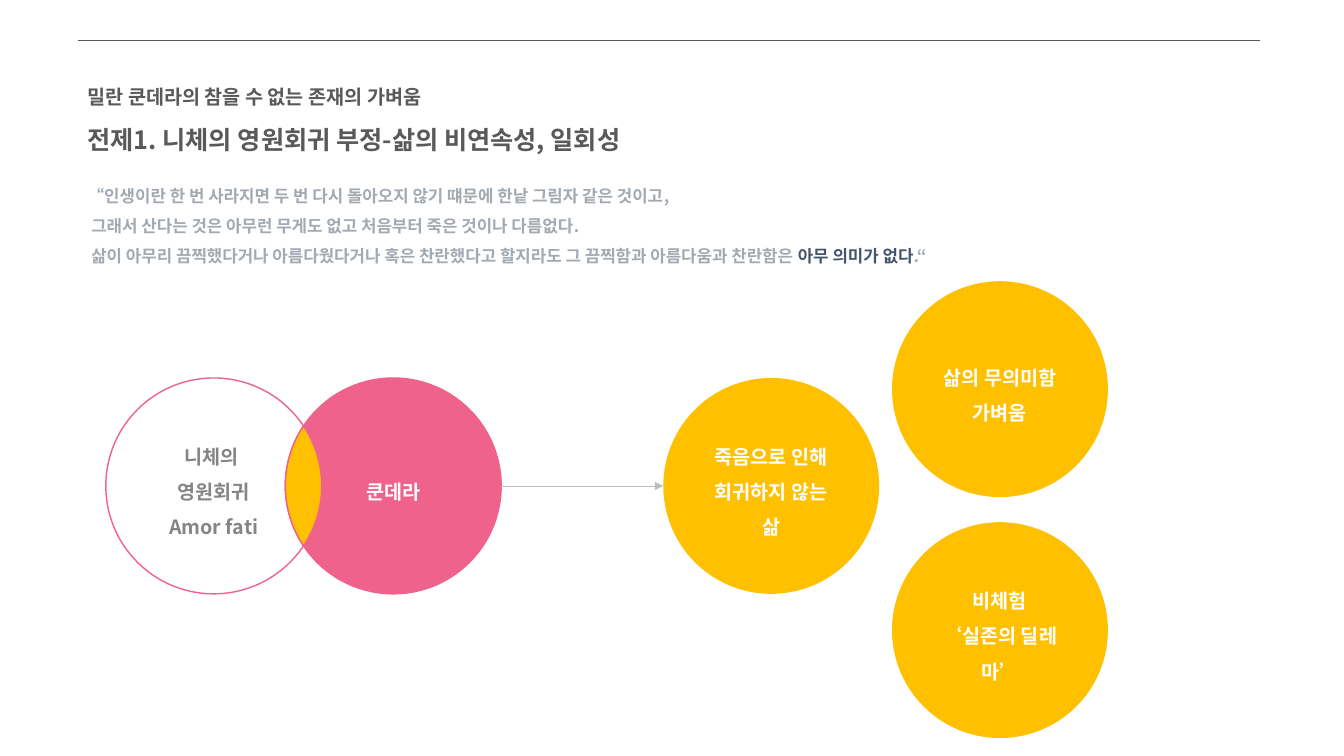
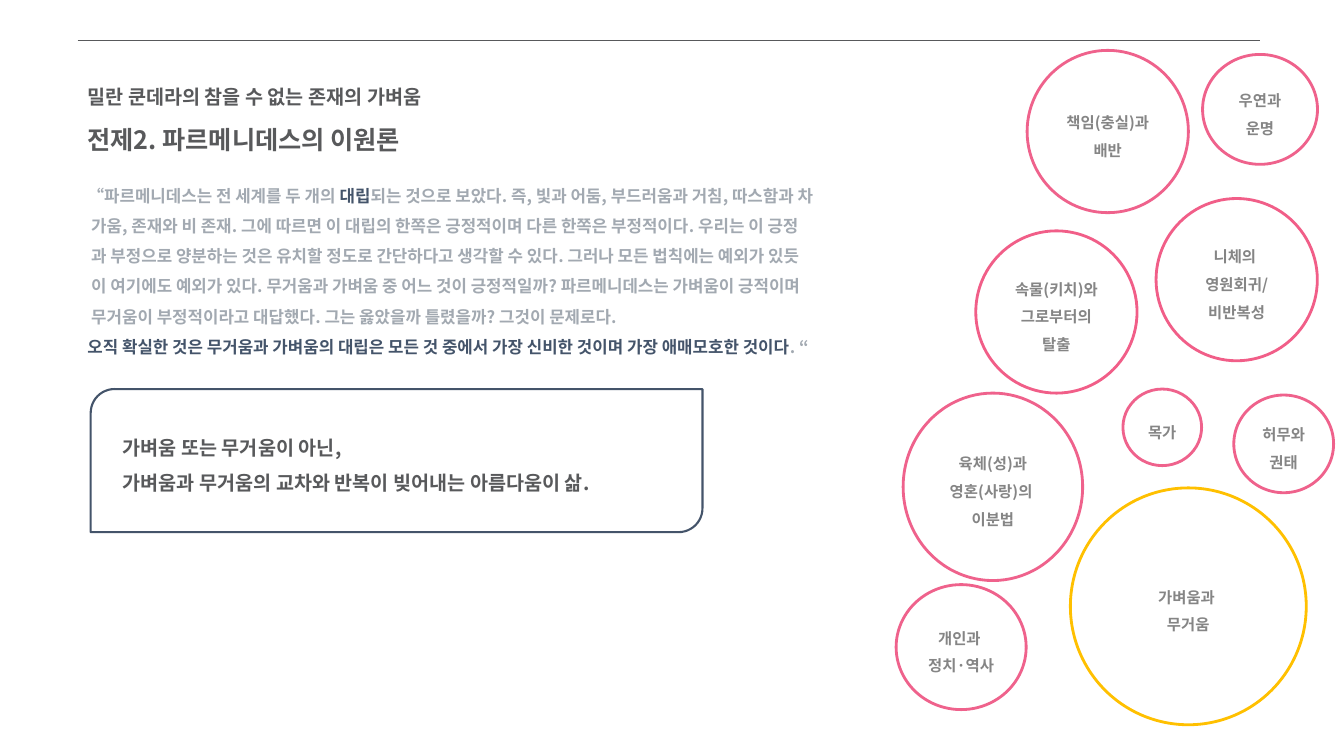
from math import acos, cos, pi, sin
from lxml.etree import SubElement
from pptx import Presentation
from pptx.dml.color import RGBColor
from pptx.enum.shapes import MSO_CONNECTOR, MSO_SHAPE
from pptx.enum.text import MSO_ANCHOR, MSO_AUTO_SIZE, PP_ALIGN
from pptx.oxml.ns import qn
from pptx.util import Pt

FONT = "Noto Sans CJK KR"
HUES = {
    "ink": "58595B", "quote": "A2A9B1", "navy": "44546A", "label": "858585",
    "pink": "EF628C", "rose": "F15E88", "gold": "FFC000", "rule": "BFBFBF",
    "white": "FFFFFF",
}
BOOK = "밀란 쿤데라의 참을 수 없는 존재의 가벼움"
EDGE = 55.4


def hue(name):
    return RGBColor.from_string(HUES[name])


def style(run, size, color):
    font = run.font
    font.size, font.bold, font.name = Pt(size), True, FONT
    font.color.rgb = hue(color)
    SubElement(run._r.get_or_add_rPr(), qn("a:ea"), typeface=FONT)


def write(frame, lines, sizes, color, align=PP_ALIGN.LEFT):
    frame.word_wrap = True
    frame.text = "\n".join(line.replace("|", "") for line in lines)
    for para, line, size in zip(frame.paragraphs, lines, sizes):
        para.alignment, para.line_spacing = align, 1.5
        if "|" in line:
            para.clear()
            for spot, part in enumerate(line.split("|")):
                if part:
                    run = para.add_run()
                    run.text = part
                    style(run, size, "navy" if spot % 2 else color)
        else:
            style(para.runs[0], size, color)


def note(slide, box, lines, sizes, color):
    frame = slide.shapes.add_textbox(*map(Pt, box)).text_frame
    write(frame, lines, sizes, color)
    frame.auto_size = MSO_AUTO_SIZE.SHAPE_TO_FIT_TEXT


def paint(shape, fill, line, width):
    shape.shadow.inherit = False
    if fill:
        shape.fill.solid()
        shape.fill.fore_color.rgb = hue(fill)
    else:
        shape.fill.background()
    if line:
        shape.line.color.rgb = hue(line)
        shape.line.width = Pt(width)
    else:
        shape.line.fill.background()


def disc(slide, box, lines, size, color, fill=None, line=None, width=1):
    shape = slide.shapes.add_shape(MSO_SHAPE.OVAL, *map(Pt, box))
    paint(shape, fill, line, width)
    frame = shape.text_frame
    frame.vertical_anchor = MSO_ANCHOR.MIDDLE
    write(frame, lines, [size] * len(lines), color, PP_ALIGN.CENTER)


def rule(slide, left, right, top, color, arrow=False):
    ends = map(Pt, (left, top, right, top))
    line = slide.shapes.add_connector(MSO_CONNECTOR.STRAIGHT, *ends)
    line.line.color.rgb = hue(color)
    line.line.width = Pt(0.5)
    if arrow:
        SubElement(line.line._get_or_add_ln(), qn("a:tailEnd"), type="triangle")
    SubElement(line._element.spPr, qn("a:effectLst"))


def base(deck, title, quote, wide, tall):
    slide = deck.slides.add_slide(deck.slide_layouts[6])
    rule(slide, EDGE, 900, 28.8, "ink")
    note(slide, (EDGE, 49, 481, 65.5), [BOOK, title], [14, 18], "ink")
    note(slide, (EDGE, 121.7, wide, tall), quote, [12] * len(quote), "quote")
    return slide


def lens(slide, left, mid, rad, gap):
    turn = acos(gap / 2 / rad)
    dots = []
    for hub, start in ((left + rad, -turn), (left + rad + gap, pi - turn)):
        for step in range(41):
            angle = start + 2 * turn * step / 40
            dots.append((Pt(hub + rad * cos(angle)), Pt(mid + rad * sin(angle))))
    path = slide.shapes.build_freeform(*dots[0])
    path.add_line_segments(dots[1:], close=True)
    paint(path.convert_to_shape(), "gold", "pink", 1)


def chain(slide, left, top, size=154.2):
    gap, mid = 128.2, top + size / 2
    goal = left + 398.2
    disc(slide, (left, top, size, size), ["니체의 ", "영원회귀", "Amor fati"],
         14, "label", line="pink")
    disc(slide, (left + gap, top, size, size), ["쿤데라"], 14, "white", "pink", "pink")
    lens(slide, left, mid, size / 2, gap)
    rule(slide, left + gap + size, goal, mid, "rule", True)
    ends = [
        (goal, top, ["죽음으로 인해 회귀하지 않는 삶"]),
        (left + 561.6, top - 69.1, ["삶의 무의미함", "가벼움"]),
        (left + 561.6, top + 103, ["비체험", "‘실존의 딜레마’"]),
    ]
    for x, y, lines in ends:
        disc(slide, (x, y, size, size), lines, 14, "white", "gold")


def cloud(slide, left, top):
    themes = [
        (5, 244.8, 128.2, 133.9, "pink", ["육체(성)과", "영혼(사랑)의 ", "이분법"]),
        (93.6, 0, 115.2, 115.9, "pink", ["책임(충실)과 배반"]),
        (241.2, 246.2, 71.3, 69.8, "pink", ["허무와 권태"]),
        (0, 381.6, 92.9, 89.3, "pink", ["개인과 ", "정치·역사"]),
        (218.9, 2.9, 82.1, 78.5, "pink", ["우연과 운명"]),
        (56.9, 128.9, 115.2, 115.9, "rose", ["속물(키치)와 그로부터의 탈출"]),
        (124.5, 312.5, 168.5, 169.2, "gold", ["가벼움과 ", "무거움"]),
        (185.7, 105.8, 115.2, 115.9, "rose", ["니체의 ", "영원회귀/", "비반복성"]),
        (162, 241.9, 56.2, 54.7, "pink", ["목가"]),
    ]
    for x, y, wide, tall, line, lines in themes:
        disc(slide, (left + x, top + y, wide, tall), lines, 11, "label",
             line=line, width=2)


def panel(slide, left, top, wide, tall):
    box = map(Pt, (left, top, wide, tall))
    frame = slide.shapes.add_shape(MSO_SHAPE.ROUND_2_DIAG_RECTANGLE, *box)
    paint(frame, "white", "navy", 1.5)
    lines = ["가벼움 또는 무거움이 아닌,",
             "가벼움과 무거움의 교차와 반복이 빚어내는 아름다움이 삶."]
    note(slide, (left + 15.8, top + 21.6, wide - 49.6, tall - 21.6),
         lines, [14, 14], "ink")


def main():
    deck = Presentation()
    deck.slide_width, deck.slide_height = Pt(960), Pt(540)
    first = base(deck, "전제1. 니체의 영원회귀 부정-삶의 비연속성, 일회성", [
        "“인생이란 한 번 사라지면 두 번 다시 돌아오지 않기 떄문에 한낱 그림자 같은 것이고,",
        " 그래서 산다는 것은 아무런 무게도 없고 처음부터 죽은 것이나 다름없다.",
        " 삶이 아무리 끔찍했다거나 아름다웠다거나 혹은 찬란했다고 할지라도 "
        "그 끔찍함과 아름다움과 찬란함은 |아무 의미가 없다|.“",
    ], 716.4, 72.7)
    chain(first, 75.6, 270)
    second = base(deck, "전제2. 파르메니데스의 이원론", [
        "“파르메니데스는 전 세계를 두 개의 |대립|되는 것으로 보았다. "
        "즉, 빛과 어둠, 부드러움과 거침, 따스함과 차",
        " 가움, 존재와 비 존재. 그에 따르면 이 대립의 한쪽은 긍정적이며 "
        "다른 한쪽은 부정적이다. 우리는 이 긍정",
        " 과 부정으로 양분하는 것은 유치할 정도로 간단하다고 생각할 수 있다. "
        "그러나 모든 법칙에는 예외가 있듯",
        " 이 여기에도 예외가 있다. 무거움과 가벼움 중 어느 것이 긍정적일까? "
        "파르메니데스는 가벼움이 긍적이며",
        " 무거움이 부정적이라고 대답했다. 그는 옳았을까 틀렸을까? 그것이 문제로다.",
        "|오직 확실한 것은 무거움과 가벼움의 대립은 모든 것 중에서 "
        "가장 신비한 것이며 가장 애매모호한 것이다|. “",
    ], 593.3, 138.2)
    panel(second, 64.8, 277.9, 437, 102.2)
    cloud(second, 640.1, 36)
    deck.save("out.pptx")


if __name__ == "__main__":
    main()
